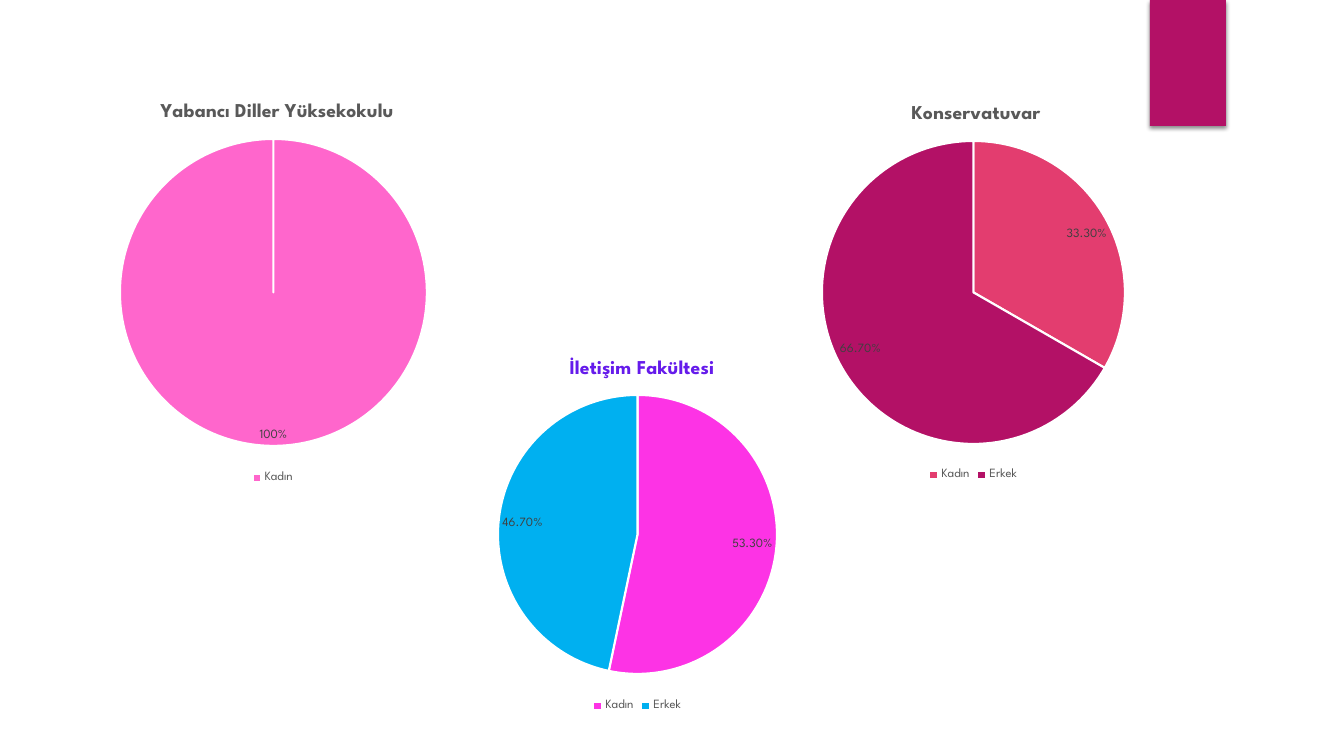
"""Build a slide with three pie charts of staff shares by gender."""
from lxml import etree
from pptx import Presentation
from pptx import util as u
from pptx.chart.data import CategoryChartData
from pptx.dml.color import RGBColor
from pptx.enum import chart as ch, shapes
from pptx.oxml import parse_xml
from pptx.oxml.ns import nsdecls, qn

FONT = "League Spartan"
HUES = {"pink": "FF66CC", "rose": "E33D6F", "wine": "B31166", "neon": "FD33E5",
        "sky": "00B0F0", "violet": "651BEB", "gray": "595959", "dark": "404040",
        "white": "FFFFFF"}
TAB = (1150, 0, 76, 126)
PIES = [
    {"title": "Yabancı Diller Yüksekokulu", "hue": "gray", "head": (157, 98),
     "box": (-71, 82, 688, 406), "disc": (120, 139, 307), "fmt": "0%",
     "parts": [("Erkek", None, "sky"), ("Kadın", 1, "pink")]},
    {"title": "Konservatuvar", "hue": "gray", "head": (908, 100),
     "box": (626, 84, 695, 401), "disc": (822, 141, 303), "fmt": "0.00%",
     "parts": [("Kadın", 0.333, "rose"), ("Erkek", 0.667, "wine")]},
    {"title": "İletişim Fakültesi", "hue": "violet", "head": (566, 355),
     "box": (317, 339, 641, 377), "disc": (498, 395, 279), "fmt": "0.00%",
     "parts": [("Kadın", 0.533, "neon"), ("Erkek", 0.467, "sky")]},
]


def px(n):
    return u.Emu(round(n * 914400 / 100.8))


def color(name):
    return RGBColor.from_string(HUES[name])


def style(font, size, hue, bold=False):
    font.name, font.size, font.bold = FONT, u.Pt(size), bold
    font.color.rgb = color(hue)


def layout(box, left, top, side=None):
    x, y, w, h = box
    vals = {"xMode": "edge", "yMode": "edge",
            "x": round((left - x) / w, 4), "y": round((top - y) / h, 4)}
    if side:
        vals = {"layoutTarget": "inner", **vals,
                "w": round(side / w, 4), "h": round(side / h, 4)}
    tags = "".join(f'<c:{k} val="{v}"/>' for k, v in vals.items())
    return parse_xml(f'<c:layout {nsdecls("c")}><c:manualLayout>{tags}'
                     '</c:manualLayout></c:layout>')


def put_layout(host, node, after=None):
    for old in host.findall(qn("c:layout")):
        host.remove(old)
    if after is None:
        host.insert(0, node)
    else:
        after.addnext(node)


def add_pie(slide, pie):
    data = CategoryChartData(number_format=pie["fmt"])
    data.categories = [name for name, _, _ in pie["parts"]]
    data.add_series("Series 1", [val for _, val, _ in pie["parts"]])
    chart = slide.shapes.add_chart(ch.XL_CHART_TYPE.PIE, *map(px, pie["box"]), data).chart
    style(chart.font, 10, "gray")

    chart.has_title = True
    run = chart.chart_title.text_frame.paragraphs[0].add_run()
    run.text = pie["title"]
    style(run.font, 14, pie["hue"], True)
    title = chart.chart_title._element
    put_layout(title, layout(pie["box"], *pie["head"]), title.find(qn("c:tx")))
    chart.chart_title.include_in_layout = False

    chart.has_legend = True
    key = chart.legend
    key.position = ch.XL_LEGEND_POSITION.BOTTOM
    key.include_in_layout = False
    style(key.font, 9, "gray")

    plot = chart.plots[0]
    plot.vary_by_categories = True
    put_layout(chart._chartSpace.chart.plotArea, layout(pie["box"], *pie["disc"]))
    plot.has_data_labels = True
    tags = plot.data_labels
    tags.show_value, tags.show_percentage = True, False
    tags.number_format, tags.number_format_is_linked = pie["fmt"], False
    tags.position = ch.XL_LABEL_POSITION.BEST_FIT
    style(tags.font, 9, "dark")

    for i, (_, val, hue) in enumerate(pie["parts"]):
        form = plot.series[0].points[i].format
        form.fill.solid()
        form.fill.fore_color.rgb = color(hue)
        form.line.color.rgb = color("white")
        form.line.width = u.Pt(1.5)
        if val is None:
            key._element.find(qn("c:legendPos")).addnext(parse_xml(
                f'<c:legendEntry {nsdecls("c")}><c:idx val="{i}"/>'
                '<c:delete val="1"/></c:legendEntry>'))


def add_tab(slide):
    tab = slide.shapes.add_shape(shapes.MSO_SHAPE.RECTANGLE, *map(px, TAB))
    tab.fill.solid()
    tab.fill.fore_color.rgb = color("wine")
    tab.line.fill.background()
    tab.shadow.inherit = False
    glow = etree.SubElement(tab._element.spPr.find(qn("a:effectLst")), qn("a:outerShdw"),
                            blurRad=str(u.Pt(3)), dist=str(u.Pt(2)), dir="5400000",
                            rotWithShape="0")
    ink = etree.SubElement(glow, qn("a:srgbClr"), val="000000")
    etree.SubElement(ink, qn("a:alpha"), val="45000")


def main():
    deck = Presentation()
    deck.slide_width, deck.slide_height = px(1344), px(756)
    slide = deck.slides.add_slide(deck.slide_layouts[6])
    add_tab(slide)
    for pie in PIES:
        add_pie(slide, pie)
    deck.save("out.pptx")


if __name__ == "__main__":
    main()
